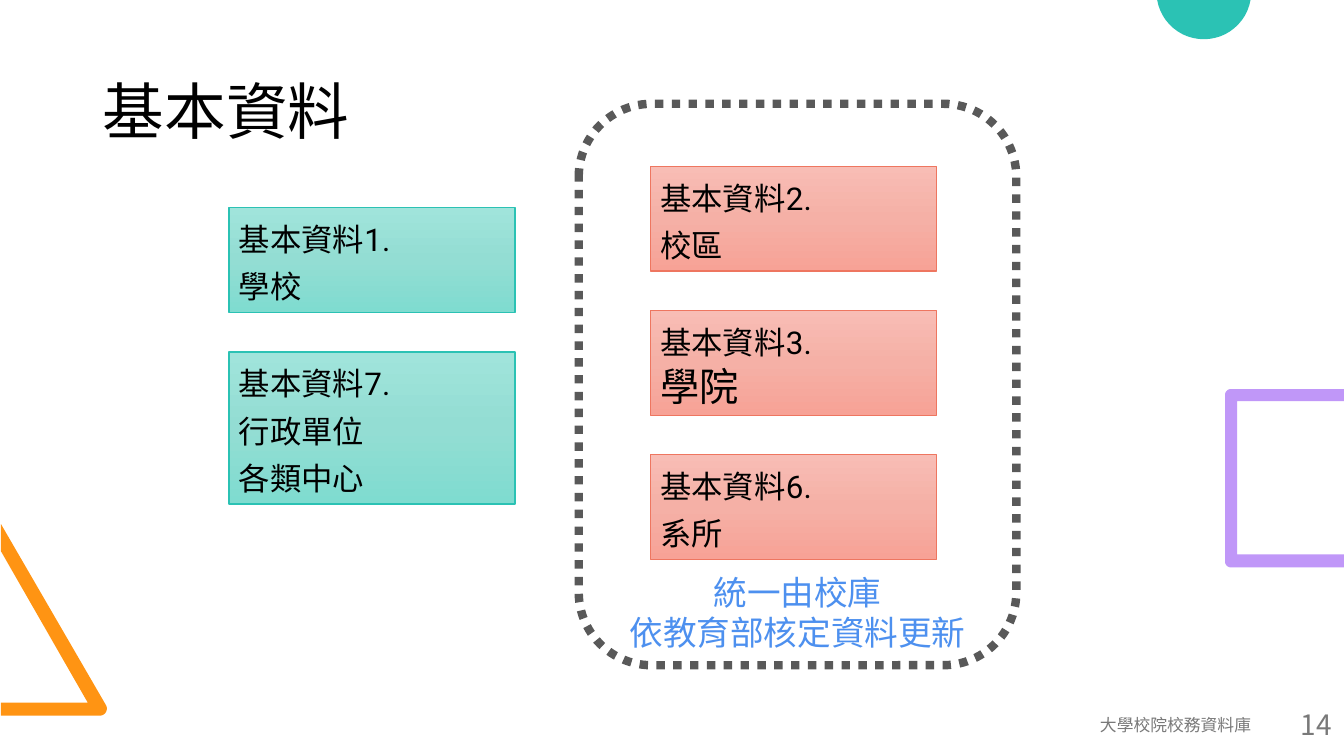
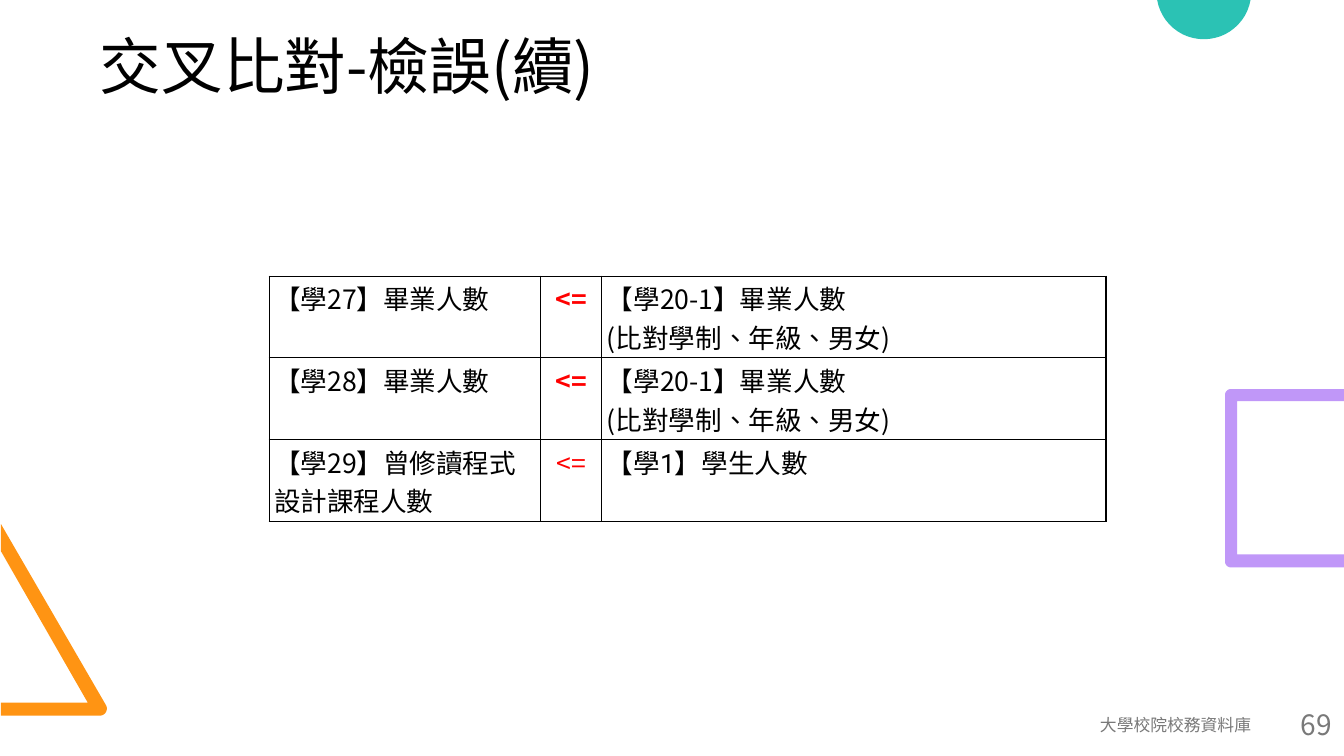
"""Build two slides on the basic data and cross-checks of a university database."""
import copy
import math

import lxml.etree
import pptx
import pptx.dml.color
import pptx.enum.dml
import pptx.enum.shapes
import pptx.enum.text
import pptx.oxml.ns
import pptx.util

inches = pptx.util.Inches
color = pptx.dml.color.RGBColor.from_string
qualified = pptx.oxml.ns.qn
ALIGN = pptx.enum.text.PP_ALIGN
ANCHOR = pptx.enum.text.MSO_ANCHOR
SHAPE = pptx.enum.shapes.MSO_SHAPE

SANS = "Noto Sans CJK TC"
BLACK, GRAY, RED, BLUE = "000000", "797979", "FF0000", "4D90EF"
TEAL, ORANGE, PURPLE, CORAL = "2BC2B4", "FF9413", "C097F8", "EE7660"
WIDTH, HEIGHT = 13.33, 7.5


def write(frame, lines, size, text_color, font=SANS, align=ALIGN.LEFT, east_font=None):
    """Fill a text frame with equally formatted lines."""
    frame.word_wrap = True
    frame.text = "\n".join(lines)
    for paragraph in frame.paragraphs:
        paragraph.alignment = align
        for run in paragraph.runs:
            run.font.name = font
            run.font.size = pptx.util.Pt(size)
            run.font.color.rgb = color(text_color)
            properties = run.font._element
            properties.set("lang", "zh-TW")
            east = lxml.etree.SubElement(properties, qualified("a:ea"))
            east.set("typeface", east_font or font)


def add_text(slide, left, top, width, height, lines, size, text_color, font, align):
    """Add a text box whose lines are centred vertically."""
    frame = slide.shapes.add_textbox(*map(inches, (left, top, width, height))).text_frame
    frame.margin_left = frame.margin_right = inches(0.12)
    frame.margin_top = frame.margin_bottom = inches(0.06)
    frame.vertical_anchor = ANCHOR.MIDDLE
    write(frame, lines, size, text_color, font, align)


presentation = pptx.Presentation()
presentation.slide_width, presentation.slide_height = inches(WIDTH), inches(HEIGHT)

decorations = [
    (ORANGE, [(0.01, 7.1), (0.01, 6.97), (0.87, 6.97), (0.01, 5.47), (0.01, 5.2),
              (0.99, 7.03, 0.07, -30, 90)]),
    (TEAL, [(11.94, -0.08, 0.47, 10, 170)]),
    (PURPLE, [(WIDTH, 5.63), (WIDTH, 5.5), (12.27, 5.5), (12.27, 3.98), (WIDTH, 3.98),
              (WIDTH, 3.86), (12.21, 3.92, 0.06, 270, 180), (12.21, 5.57, 0.06, 180, 90)]),
]
pages = [
    ("基本資料", "14", "Calibri", ANCHOR.MIDDLE, 0.1, 0.05),
    ("交叉比對-檢誤(續)", "69", SANS, ANCHOR.TOP, 0.07, 0.03),
]
slides = []
for title_text, number, font, anchor, side_margin, end_margin in pages:
    slide = presentation.slides.add_slide(presentation.slide_layouts[5])
    slides.append(slide)
    for fill_color, outline in decorations:
        points = []
        for x, y, *arc in outline:
            if not arc:
                points.append((inches(x), inches(y)))
                continue
            radius, start, end = arc
            for step in range(25):
                angle = math.radians(start + (end - start) * step / 24)
                points.append((inches(x + radius * math.cos(angle)),
                               inches(max(0, y + radius * math.sin(angle)))))
        builder = slide.shapes.build_freeform(*points[0])
        builder.add_line_segments(points[1:])
        shape = builder.convert_to_shape()
        shape.shadow.inherit = False
        shape.fill.solid()
        shape.fill.fore_color.rgb = color(fill_color)
        shape.line.fill.background()

    title = slide.shapes.title
    title.left, title.top, title.width, title.height = map(inches, (0.92, 0.33, 11.5, 1.61))
    frame = title.text_frame
    frame.auto_size = pptx.enum.text.MSO_AUTO_SIZE.NONE
    frame.vertical_anchor = anchor
    frame.margin_left = frame.margin_right = inches(side_margin)
    frame.margin_top = frame.margin_bottom = inches(end_margin)
    write(frame, [title_text], 44, BLACK, font)
    frame.paragraphs[0].line_spacing = 0.9

    for left, width, text, size in [(6.86, 5.67, "大學校院校務資料庫", 12), (12.67, 0.66, number, 20)]:
        add_text(slide, left, 6.99, width, 0.4, [text], size, GRAY, SANS, ALIGN.RIGHT)

basic_slide, check_slide = slides

teal_stops = ("A0E4DB", "93DDD3", "7FDCD0")
coral_stops = ("F8BDB5", "F5B0A6", "F7A296")
box_columns = [
    (2.27, 2.06, TEAL, teal_stops, [("基本資料1.", "學校"), ("基本資料7.", "行政單位", "各類中心")]),
    (6.45, 1.65, CORAL, coral_stops,
     [("基本資料2.", "校區"), ("基本資料3.", "學院"), ("基本資料6.", "系所")]),
]
row_pitch, line_height = 1.43, 0.47
for left, top, line_color, stops, boxes in box_columns:
    for row, lines in enumerate(boxes):
        box = basic_slide.shapes.add_shape(
            SHAPE.RECTANGLE, inches(left), inches(top + row * row_pitch),
            inches(2.84), inches(0.1 + line_height * len(lines)))
        box.shadow.inherit = False
        box.line.color.rgb = color(line_color)
        box.line.width = pptx.util.Pt(1)
        box.fill.gradient()
        box.fill.gradient_angle = 270
        stop_list = box._element.spPr.find(".//" + qualified("a:gsLst"))
        stop_list.insert(1, copy.deepcopy(stop_list[0]))
        for index, stop in enumerate(box.fill.gradient_stops):
            stop.color.rgb = color(stops[index])
            stop.position = index / 2
        box.text_frame.vertical_anchor = ANCHOR.TOP
        write(box.text_frame, lines, 28, BLACK, "Roboto")
        for paragraph in box.text_frame.paragraphs:
            if paragraph.text != "學院":
                paragraph.runs[0].font._element.set("cap", "small")

group_left, group_width = 5.74, 4.34
group = basic_slide.shapes.add_shape(
    SHAPE.ROUNDED_RECTANGLE, *map(inches, (group_left, 1.03, group_width, 5.57)))
group.shadow.inherit = False
group.fill.background()
group.line.color.rgb = color("595959")
group.line.width = pptx.util.Pt(6)
group.line.dash_style = pptx.enum.dml.MSO_LINE.ROUND_DOT
add_text(basic_slide, group_left, 5.65, group_width, 0.85,
         ["統一由校庫", "依教育部核定資料更新"], 24, BLUE, "Roboto", ALIGN.CENTER)

graduates = ["【學20-1】畢業人數", "(比對學制、年級、男女)"]
checks = [
    (["【學27】畢業人數"], ["<="], graduates),
    (["【學28】畢業人數"], ["<="], graduates),
    (["【學29】曾修讀程式設計課程人數"], ["<="], ["【學1】學生人數"]),
]
column_widths = (2.69, 0.61, 5)
row_height = 0.81
table = check_slide.shapes.add_table(
    len(checks), len(column_widths), inches(2.67), inches(2.74),
    inches(sum(column_widths)), inches(row_height * len(checks))).table
table.first_row = table.horz_banding = False
for column, width in zip(table.columns, column_widths):
    column.width = inches(width)
for row, check in enumerate(checks):
    table.rows[row].height = inches(row_height)
    for column, lines in enumerate(check):
        cell = table.cell(row, column)
        cell.margin_left = cell.margin_right = inches(0.05)
        cell.margin_top = cell.margin_bottom = inches(0.03)
        is_sign = column == 1
        is_last = row == len(checks) - 1
        write(cell.text_frame, lines, 19, RED if is_sign else BLACK,
              "Roboto" if is_last and column == 2 else SANS,
              ALIGN.CENTER if is_sign else ALIGN.LEFT, SANS)
        for paragraph in cell.text_frame.paragraphs:
            paragraph.runs[0].font.bold = is_sign and not is_last
        properties = cell._tc.get_or_add_tcPr()
        for side in ("a:lnL", "a:lnR", "a:lnT", "a:lnB"):
            border = lxml.etree.SubElement(properties, qualified(side), w=str(pptx.util.Pt(1)))
            fill = lxml.etree.SubElement(border, qualified("a:solidFill"))
            lxml.etree.SubElement(fill, qualified("a:srgbClr"), val=BLACK)
        cell.fill.background()

presentation.save("out.pptx")
